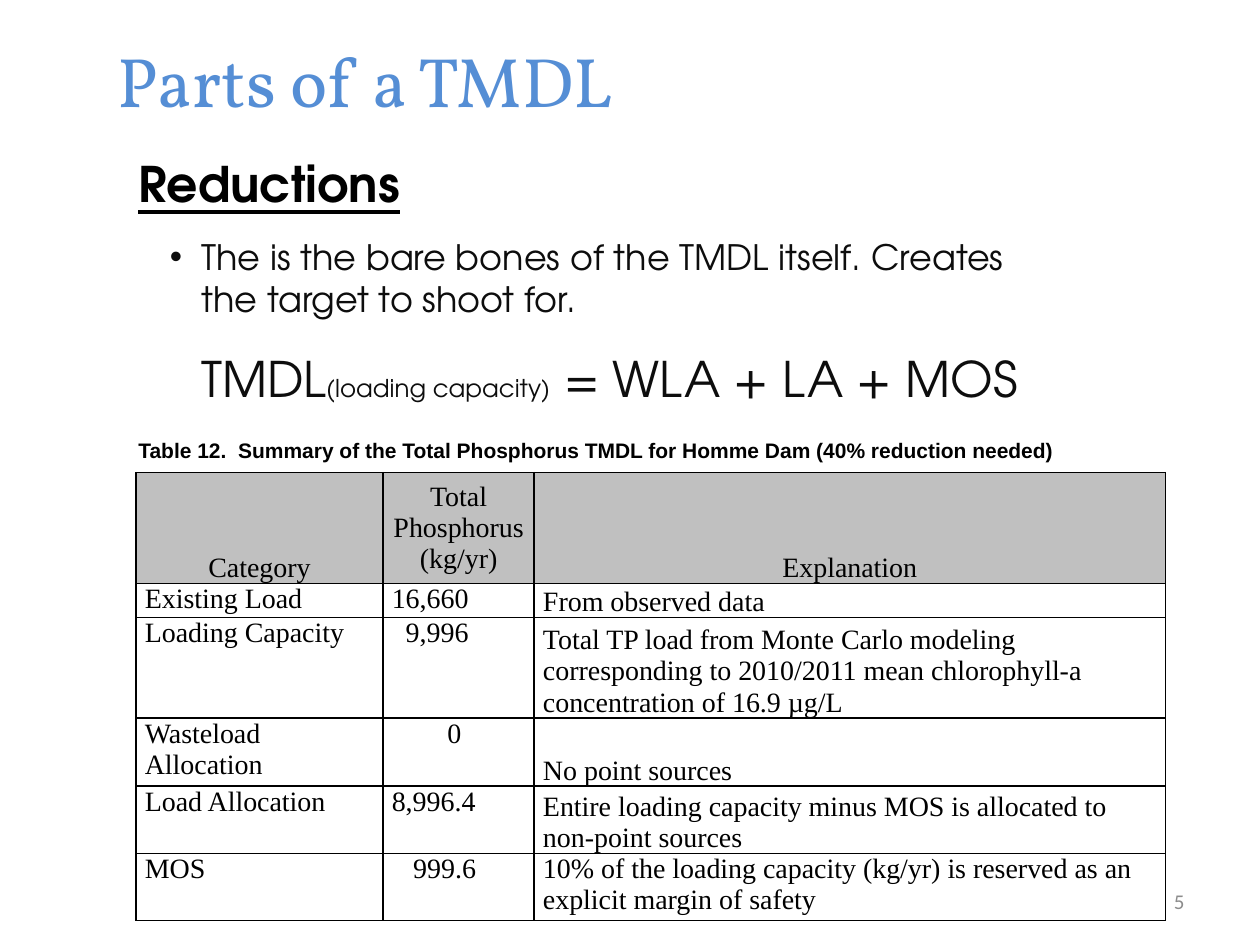
from lxml.etree import SubElement
from pptx import Presentation
from pptx.dml.color import RGBColor
from pptx.enum.text import MSO_ANCHOR as Anchor, MSO_AUTO_SIZE as AutoSize, PP_ALIGN as Align
from pptx.oxml.ns import qn
from pptx.util import Emu, Pt

PX = 9144  # one hundredth of an inch
BLACK = RGBColor(0, 0, 0)
INK = RGBColor(0x0D, 0x0D, 0x0D)
BLUE = RGBColor(0x55, 0x8E, 0xD5)
GREY = RGBColor(0x8C, 0x8C, 0x8C)
SILVER = RGBColor(0xC0, 0xC0, 0xC0)
HEADING_FONT = "Vollkorn"
BODY_FONT = "TeX Gyre Adventor"
TABLE_FONT = "Times New Roman"

HEADERS = ("Category", "Total Phosphorus (kg/yr)", "Explanation")
# Category, amount, indent of the amount, explanation
LOADS = (
    ("Existing Load", "16,660", 0, "From observed data"),
    ("Loading Capacity", "9,996", 11,
     "Total TP load from Monte Carlo modeling corresponding to 2010/2011 "
     "mean chlorophyll-a concentration of 16.9 µg/L"),
    ("Wasteload Allocation", "0", 44, "No point sources"),
    ("Load Allocation", "8,996.4", 0,
     "Entire loading capacity minus MOS is allocated to non-point sources"),
    ("MOS", "999.6", 17,
     "10% of the loading capacity (kg/yr) is reserved as an explicit margin of safety"),
)
COLUMN_WIDTHS = (196, 120, 501)
ROW_HEIGHTS = (88, 27, 79, 54, 53, 53)


def px(length):
    return Emu(length * PX)


class SlideBuilder:
    def __init__(self, slide):
        self.slide = slide

    def run(self, paragraph, text, font, size, color, bold=False, underline=False):
        run = paragraph.add_run()
        run.text = text
        run.font.name = font
        run.font.size = Pt(size)
        run.font.color.rgb = color
        run.font.bold = bold
        run.font.underline = underline

    def place(self, shape, left, top, width, height):
        shape.left, shape.top, shape.width, shape.height = map(px, (left, top, width, height))

    def title(self, text, *box):
        title = self.slide.shapes.title
        self.place(title, *box)
        frame = title.text_frame
        frame.auto_size = AutoSize.NONE
        frame.vertical_anchor = Anchor.TOP
        paragraph = frame.paragraphs[0]
        paragraph.alignment = Align.LEFT
        self.run(paragraph, text, HEADING_FONT, 40, BLUE)

    def text_box(self, *box, anchor=Anchor.TOP):
        frame = self.slide.shapes.add_textbox(*map(px, box)).text_frame
        frame.word_wrap = True
        frame.vertical_anchor = anchor
        return frame

    def indent(self, paragraph, left, bullet=None):
        """Indent a paragraph; a bullet hangs 25 px left of its text."""
        properties = paragraph._p.get_or_add_pPr()
        properties.set("marL", str(px(left)))
        properties.set("indent", str(px(-25 if bullet else 0)))
        if bullet:
            SubElement(properties, qn("a:buFont"), typeface="Arial")
            SubElement(properties, qn("a:buChar"), char=bullet)

    def border(self, cell):
        properties = cell._tc.get_or_add_tcPr()
        for position, side in enumerate(("a:lnL", "a:lnR", "a:lnT", "a:lnB")):
            line = SubElement(properties, qn(side), w=str(Pt(1)))
            fill = SubElement(line, qn("a:solidFill"))
            SubElement(fill, qn("a:srgbClr"), val=str(BLACK))
            properties.insert(position, line)

    def cell(self, cell, text, anchor=Anchor.TOP, align=Align.LEFT, fill=None, indent=0):
        cell.margin_left, cell.margin_right = px(7 + indent), px(7)
        cell.margin_top = cell.margin_bottom = 0
        cell.vertical_anchor = anchor
        if fill is None:
            cell.fill.background()
        else:
            cell.fill.solid()
            cell.fill.fore_color.rgb = fill
        self.border(cell)
        paragraph = cell.text_frame.paragraphs[0]
        paragraph.alignment = align
        self.run(paragraph, text, TABLE_FONT, 16, BLACK)

    def load_table(self, left, top):
        table = self.slide.shapes.add_table(
            len(ROW_HEIGHTS), len(COLUMN_WIDTHS), px(left), px(top),
            px(sum(COLUMN_WIDTHS)), px(sum(ROW_HEIGHTS))).table
        table.first_row = table.horz_banding = False
        for column, width in zip(table.columns, COLUMN_WIDTHS):
            column.width = px(width)
        for row, height in zip(table.rows, ROW_HEIGHTS):
            row.height = px(height)
        for column, header in enumerate(HEADERS):
            anchor = Anchor.MIDDLE if column == 1 else Anchor.BOTTOM
            self.cell(table.cell(0, column), header, anchor, Align.CENTER, SILVER)
        for row, (category, amount, indent, explanation) in enumerate(LOADS, start=1):
            self.cell(table.cell(row, 0), category)
            self.cell(table.cell(row, 1), amount, indent=indent)
            anchor = Anchor.TOP if row == len(LOADS) else Anchor.BOTTOM
            self.cell(table.cell(row, 2), explanation, anchor)


def main():
    presentation = Presentation()
    presentation.slide_width, presentation.slide_height = px(1000), px(750)
    slide = presentation.slides.add_slide(presentation.slide_layouts[5])
    builder = SlideBuilder(slide)

    number = builder.text_box(717, 695, 233, 40, anchor=Anchor.MIDDLE).paragraphs[0]
    number.alignment = Align.RIGHT
    builder.run(number, "5", "Calibri", 12, GREY)

    builder.title("Parts of a TMDL", 83, 25, 475, 77)

    body = builder.text_box(100, 117, 733, 214)
    builder.run(body.paragraphs[0], "Reductions", BODY_FONT, 28, BLACK, bold=True, underline=True)
    point = body.add_paragraph()
    point.space_before = Pt(13)
    builder.indent(point, 50, "•")
    builder.run(point, "The is the bare bones of the TMDL itself. Creates the target to shoot for.",
                BODY_FONT, 20, INK)
    formula = body.add_paragraph()
    formula.line_spacing = 1.5
    builder.indent(formula, 50)
    for text, size in (("TMDL", 28), ("(loading capacity)", 14), (" = WLA + LA + MOS", 28)):
        builder.run(formula, text, BODY_FONT, size, INK)

    builder.load_table(108, 375)

    caption = builder.text_box(100, 342, 817, 61).paragraphs[0]
    builder.run(caption, "Table 12.  Summary of the Total Phosphorus TMDL for Homme Dam "
                "(40% reduction needed)", "Arial", 12, BLACK, bold=True)

    presentation.save("out.pptx")


if __name__ == "__main__":
    main()
